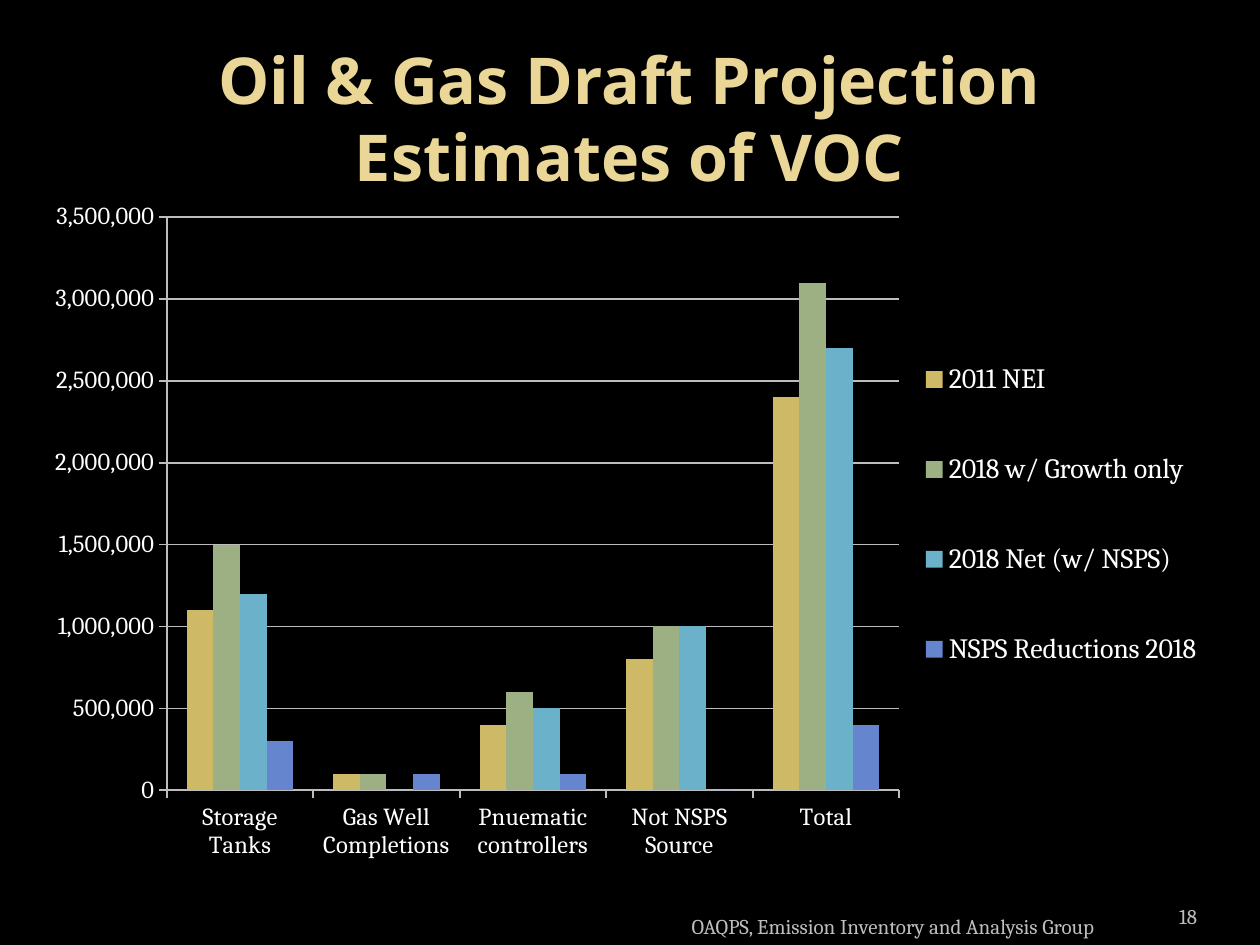
from lxml import etree
from pptx import Presentation
from pptx.chart.data import CategoryChartData
from pptx.dml.color import RGBColor
from pptx.enum.chart import XL_CHART_TYPE, XL_LEGEND_POSITION, XL_TICK_MARK
from pptx.enum.text import MSO_ANCHOR, PP_ALIGN
from pptx.oxml.ns import qn
from pptx.util import Emu, Pt

PX_PER_INCH = 126
COLUMN_CLUSTERED = XL_CHART_TYPE.COLUMN_CLUSTERED
LEGEND_RIGHT = XL_LEGEND_POSITION.RIGHT
TICK_OUTSIDE = XL_TICK_MARK.OUTSIDE
MIDDLE, BOTTOM = MSO_ANCHOR.MIDDLE, MSO_ANCHOR.BOTTOM
CENTER, RIGHT = PP_ALIGN.CENTER, PP_ALIGN.RIGHT

BODY_FONT, TITLE_FONT = "Cambria", "Open Sans"
WHITE, GRAY, GOLD, BLACK = "FFFFFF", "BDBDBD", "EAD696", "000000"
CATEGORIES = ["Storage Tanks", "Gas Well Completions", "Pnuematic controllers",
              "Not NSPS Source", "Total"]
SERIES = [
    ("2011 NEI", "CEB966", [1100000, 100000, 400000, 800000, 2400000]),
    ("2018 w/ Growth only", "9CB084", [1500000, 100000, 600000, 1000000, 3100000]),
    ("2018 Net (w/ NSPS)", "6BB1C9", [1200000, 0, 500000, 1000000, 2700000]),
    ("NSPS Reductions 2018", "6585CF", [300000, 100000, 100000, 0, 400000]),
]


def px(length):
    """Turn pixels into EMU."""
    return Emu(round(length * 914400 / PX_PER_INCH))


def color(hex_value):
    """Return a colour from its hex string."""
    return RGBColor.from_string(hex_value)


def style_font(font, size, name=BODY_FONT, hex_value=WHITE, bold=False):
    """Set the face, size, colour and weight of a font."""
    font.name, font.size, font.bold = name, Pt(size), bold
    font.color.rgb = color(hex_value)


def style_line(line):
    """Make a chart line thin and gray."""
    line.color.rgb = color(GRAY)
    line.width = Pt(1)


def add_text(slide, box, text, size, align, anchor, side_inset=13, **font_options):
    """Add a wrapped text box holding one paragraph."""
    frame = slide.shapes.add_textbox(*map(px, box)).text_frame
    frame.word_wrap = True
    frame.vertical_anchor = anchor
    frame.margin_left = frame.margin_right = px(side_inset)
    paragraph = frame.paragraphs[0]
    paragraph.alignment = align
    run = paragraph.add_run()
    run.text = text
    style_font(run.font, size, **font_options)


def set_layout(parent, index, inner=False, **fractions):
    """Place a chart part by fractions of the chart's size."""
    for old_layout in parent.findall(qn("c:layout")):
        parent.remove(old_layout)
    layout = etree.Element(qn("c:layout"))
    manual = etree.SubElement(layout, qn("c:manualLayout"))
    settings = {"layoutTarget": "inner"} if inner else {}
    settings.update(xMode="edge", yMode="edge", **fractions)
    for tag, value in settings.items():
        etree.SubElement(manual, qn(f"c:{tag}")).set("val", str(value))
    parent.insert(index, layout)


def style_axis(axis):
    """Give an axis outer ticks, a gray line and white labels."""
    axis.major_tick_mark = TICK_OUTSIDE
    style_line(axis.format.line)
    style_font(axis.tick_labels.font, 14)


def add_column_chart(slide, box):
    """Add the clustered columns with axes and legend."""
    data = CategoryChartData(number_format="#,##0")
    data.categories = CATEGORIES
    for name, _, values in SERIES:
        data.add_series(name, values)
    chart = slide.shapes.add_chart(COLUMN_CLUSTERED, *map(px, box), data).chart
    chart.has_title = False
    style_font(chart.font, 10)

    plot = chart.plots[0]
    plot.gap_width, plot.overlap = 150, 0
    plot.vary_by_categories = False
    for series, (_, fill, _) in zip(plot.series, SERIES):
        series.format.fill.solid()
        series.format.fill.fore_color.rgb = color(fill)

    style_axis(chart.category_axis)
    value_axis = chart.value_axis
    style_axis(value_axis)
    value_axis.minimum_scale, value_axis.maximum_scale = 0, 3500000
    value_axis.major_unit = 500000
    value_axis.tick_labels.number_format = "#,##0"
    value_axis.tick_labels.number_format_is_linked = False
    style_line(value_axis.major_gridlines.format.line)

    chart.has_legend = True
    legend = chart.legend
    legend.position = LEGEND_RIGHT
    legend.include_in_layout = False
    style_font(legend.font, 16)
    plot_area = chart.element.find(".//" + qn("c:plotArea"))
    set_layout(plot_area, 0, inner=True, x=0.114, y=0.041, w=0.615, h=0.837)
    set_layout(chart.element.find(".//" + qn("c:legend")), 1,
               x=0.74, y=0.17, w=0.25, h=0.61)


def main():
    """Build the slide and save it."""
    presentation = Presentation()
    presentation.slide_width, presentation.slide_height = px(1260), px(945)
    slide = presentation.slides.add_slide(presentation.slide_layouts[6])
    slide.background.fill.solid()
    slide.background.fill.fore_color.rgb = color(BLACK)

    add_text(slide, (63, 38, 1134, 158), "Oil & Gas Draft Projection Estimates of VOC",
             36.9, CENTER, MIDDLE, name=TITLE_FONT, hex_value=GOLD, bold=True)
    add_text(slide, (620, 895, 546, 50), "OAQPS, Emission Inventory and Analysis Group",
             12, CENTER, BOTTOM, hex_value=GRAY)
    add_text(slide, (1092, 885, 105, 50), "18", 12, RIGHT, BOTTOM,
             side_inset=0, hex_value=GRAY)
    add_column_chart(slide, (31, 189, 1191, 685))
    presentation.save("out.pptx")


if __name__ == "__main__":
    main()
